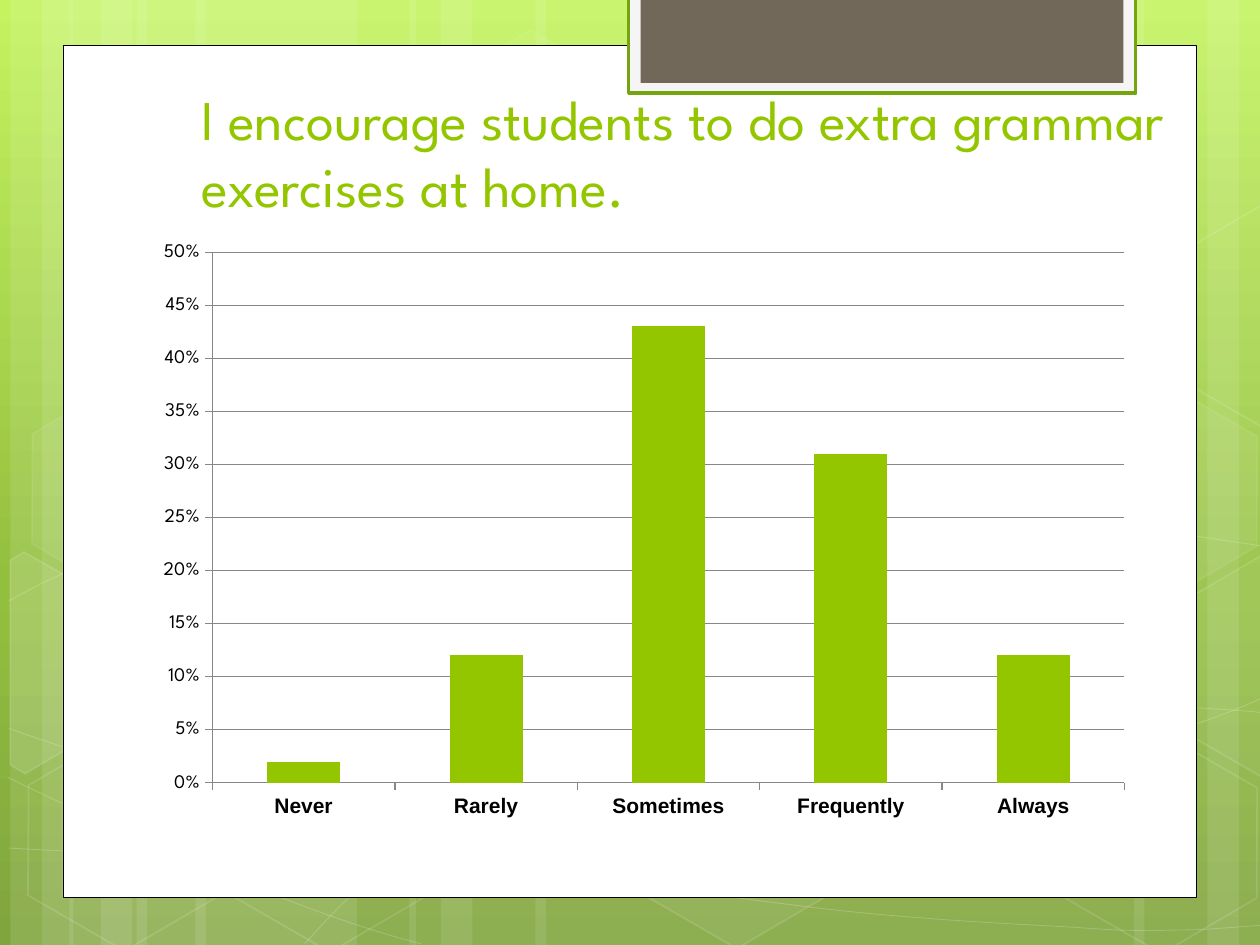
from copy import deepcopy
from dataclasses import dataclass
from typing import Optional

from lxml import etree
from pptx import Presentation
from pptx.chart import data as cd
from pptx.dml import color as dml
from pptx.enum import chart as ce, shapes, text
from pptx.oxml import ns
from pptx.util import Pt

WHITE, GREEN, GREY, BLACK = "FFFFFF", "94C600", "878787", "000000"
HEADING_FONT, LABEL_FONT = "League Spartan", "Arial"
GRADIENT = [(0, "C3F35F"), (0.62, "93BF3F"), (1, "81A53E")]
BAND_TRIOS = [(6, 126), (39.6, 126), (234, 222)]
MIRRORED_EDGE = 726


@dataclass
class Style:
    fill: Optional[str] = None
    fill_alpha: int = 100
    line: Optional[str] = None
    line_alpha: int = 100
    width: float = 1


@dataclass
class Box:
    left: float
    top: float
    width: float
    height: float
    style: Style


@dataclass
class Outline:
    points: list
    style: Style


def glass(fill_alpha: int, line_alpha: int) -> Style:
    return Style(WHITE if fill_alpha else None, fill_alpha, WHITE, line_alpha)


BAND = Style(WHITE, 10)
THREAD = Style(line=WHITE, line_alpha=20, width=0.5)

CURVES = [
    [(5, 484.6), (43.9, 486.7), (82.8, 488.9), (136.8, 488.2),
     (190.8, 487.4), (257.8, 486), (329.8, 478.8),
     (401.8, 471.6), (504, 457.9), (570.2, 444.2),
     (635.8, 430.6), (703.4, 409), (725, 396.7)],
    [(5, 343.4), (25.9, 331.9), (46.8, 321.1), (87.1, 310.3),
     (128.2, 299.5), (186.5, 283.7), (249.8, 278.6),
     (313.9, 273.6), (391.7, 272.9), (470.9, 278.6),
     (550.1, 284.4), (681.8, 306.7), (725, 312.5)],
    [(4.3, 444.2), (86.4, 483.8), (177.8, 523.4), (240.5, 539.3)],
    [(5, 416.2), (27.4, 424.1), (50.4, 432), (92.2, 443.5),
     (133.9, 454.3), (196.6, 472.3), (257, 484.6),
     (316.8, 496.8), (392.4, 509.8), (452.2, 517),
     (511.9, 524.9), (576, 527.8), (614.2, 529.9),
     (651.6, 532.8), (661.7, 531.4), (680.4, 531.4),
     (699.1, 530.6), (711.9, 529.2), (725, 528.5)],
    [(174.2, 539.3), (187.2, 524.9), (200.2, 510.5), (217.4, 497.5),
     (234.7, 484.6), (259.2, 470.2), (279.4, 460.1),
     (299.5, 450), (311.8, 445.7), (338.4, 438.5),
     (364.3, 431.3), (412.6, 421.2), (437.8, 416.2),
     (463.7, 411.1), (467.3, 411.1), (489.6, 409.7),
     (511.9, 407.5), (547.2, 405.4), (571.7, 404.6),
     (596.9, 403.9), (637.9, 404.6), (686.2, 404.6),
     (699.1, 405.4), (711.4, 406.1), (724.3, 407.5)],
]
HEXAGONS = [
    Box(left, top, 126, 109.4, style) for left, top, style in [
        (240.5, 25.9, glass(4, 8)), (357.8, 424.1, glass(6, 12)),
        (7.9, 425.5, glass(0, 12)), (10.1, 224.6, glass(7, 8)),
        (125.3, 426.2, glass(0, 12)), (600.5, 427, glass(0, 12)),
        (600.5, 226.1, glass(7, 8))]]
CUT_HEXAGONS = [
    Outline([(5.8, 320.4), (13.7, 315.4), (69.1, 347), (68.4, 410.4),
             (14.4, 442.1), (5.8, 437)], glass(10, 12)),
    Outline([(666.7, 349.2), (720.7, 317.5), (726.5, 321.1), (726.5, 441.4),
             (721.4, 444.2), (666.7, 412.6)], glass(4, 12)),
    Outline([(666.7, 149), (720.7, 117.4), (727.2, 121), (726.5, 241.2),
             (721.4, 244.1), (666.7, 212.4)], glass(0, 12)),
]
PANELS = [
    Box(36, 26, 648, 487, Style(WHITE, line=BLACK, width=0.5)),
    Box(359.3, -1.4, 289.7, 54.7, Style("F5F5F5", line="74A510", width=2)),
    Box(366, -1.4, 276, 48.8, Style("71685A")),
]


def rgb(value: str) -> dml.RGBColor:
    return dml.RGBColor.from_string(value)


def fade(parent, alpha: int) -> None:
    if alpha < 100:
        clr = parent.find(".//" + ns.qn("a:srgbClr"))
        etree.SubElement(clr, ns.qn("a:alpha")).set("val", str(alpha * 1000))


def paint(sp, style: Style) -> None:
    sp.shadow.inherit = False
    props = sp._element.spPr
    if style.fill:
        sp.fill.solid()
        sp.fill.fore_color.rgb = rgb(style.fill)
        fade(props.find(ns.qn("a:solidFill")), style.fill_alpha)
    else:
        sp.fill.background()
    if style.line:
        sp.line.color.rgb = rgb(style.line)
        sp.line.width = Pt(style.width)
        fade(props.find(ns.qn("a:ln")), style.line_alpha)
    else:
        sp.line.fill.background()


def draw_box(s, box: Box, kind=shapes.MSO_SHAPE.RECTANGLE):
    sp = s.shapes.add_shape(kind, Pt(box.left), Pt(box.top), Pt(box.width), Pt(box.height))
    paint(sp, box.style)
    return sp


def draw_hexagon(s, box: Box) -> None:
    sp = draw_box(s, box, shapes.MSO_SHAPE.HEXAGON)
    sp.adjustments[0] = 0.285
    sp.rotation = 30


def draw_outline(s, outline: Outline, close: bool):
    start, *rest = [(Pt(x), Pt(y)) for x, y in outline.points]
    builder = s.shapes.build_freeform(*start)
    builder.add_line_segments(rest, close=close)
    sp = builder.convert_to_shape()
    paint(sp, outline.style)
    return sp


def draw_curve(s, points: list) -> None:
    sp = draw_outline(s, Outline(points, THREAD), False)
    segments = list(sp._element.iter(ns.qn("a:lnTo")))
    for i in range(0, len(segments), 3):
        bezier = etree.SubElement(segments[i].getparent(), ns.qn("a:cubicBezTo"))
        for segment in segments[i:i + 3]:
            bezier.append(segment[0])
            segment.getparent().remove(segment)


def draw_background(s) -> None:
    fill = s.background.fill
    fill.gradient()
    fill.gradient_angle = 270
    stops = next(s._element.iter(ns.qn("a:gsLst")))
    stops.append(deepcopy(stops[0]))
    for stop, (position, value) in zip(fill.gradient_stops, GRADIENT):
        stop.position = position
        stop.color.rgb = rgb(value)
    for base, wide in BAND_TRIOS:
        for offset, width in ((72, wide), (0, 36), (18, 60)):
            draw_box(s, Box(base + offset, 0, width, 540, BAND))
    for offset, width in ((72, 126), (0, 36), (18, 60)):
        draw_box(s, Box(MIRRORED_EDGE - offset - width, 0, width, 540, BAND))
    for curve in CURVES:
        draw_curve(s, curve)
    for hexagon in HEXAGONS:
        draw_hexagon(s, hexagon)
    for outline in CUT_HEXAGONS:
        draw_outline(s, outline, True)
    for panel in PANELS:
        draw_box(s, panel)


def set_font(font, size: float, name: str, value: str, bold: bool = False) -> None:
    font.size, font.name, font.bold = Pt(size), name, bold
    font.color.rgb = rgb(value)


def draw_title(s) -> None:
    sp = s.shapes.title
    s.shapes._spTree.append(sp._element)
    sp.left, sp.top, sp.width, sp.height = Pt(108), Pt(48), Pt(570.2), Pt(80.6)
    tf = sp.text_frame
    tf.text = "I encourage students to do extra grammar exercises at home."
    tf.word_wrap = True
    tf.auto_size = text.MSO_AUTO_SIZE.NONE
    tf.vertical_anchor = text.MSO_ANCHOR.BOTTOM
    p = tf.paragraphs[0]
    p.alignment = text.PP_ALIGN.LEFT
    set_font(p.font, 32, HEADING_FONT, GREEN)


def draw_chart(s) -> None:
    data = cd.CategoryChartData(number_format="0%")
    data.categories = ["Never", "Rarely", "Sometimes", "Frequently", "Always"]
    data.add_series("Series 1", [0.02, 0.12, 0.43, 0.31, 0.12])
    chart = s.shapes.add_chart(ce.XL_CHART_TYPE.COLUMN_CLUSTERED, Pt(82), Pt(132),
                               Pt(572), Pt(342), data).chart
    chart.has_title = chart.has_legend = False
    set_font(chart.font, 10, HEADING_FONT, BLACK)
    plot = chart.plots[0]
    plot.gap_width = 150
    plot.vary_by_categories = False
    fill = plot.series[0].format.fill
    fill.solid()
    fill.fore_color.rgb = rgb(GREEN)
    cat, val = chart.category_axis, chart.value_axis
    set_font(cat.tick_labels.font, 12, LABEL_FONT, BLACK, True)
    set_font(val.tick_labels.font, 11, HEADING_FONT, BLACK)
    val.minimum_scale, val.maximum_scale, val.major_unit = 0, 0.5, 0.05
    val.tick_labels.number_format = "0%"
    val.tick_labels.number_format_is_linked = False
    val.has_major_gridlines = True
    for axis in (cat, val):
        axis.major_tick_mark = ce.XL_TICK_MARK.OUTSIDE
    for part in (cat, val, val.major_gridlines):
        part.format.line.color.rgb = rgb(GREY)


def main() -> None:
    prs = Presentation()
    prs.slide_width, prs.slide_height = Pt(720), Pt(540)
    s = prs.slides.add_slide(prs.slide_layouts[5])
    draw_background(s)
    draw_title(s)
    draw_chart(s)
    prs.save("out.pptx")


if __name__ == "__main__":
    main()
